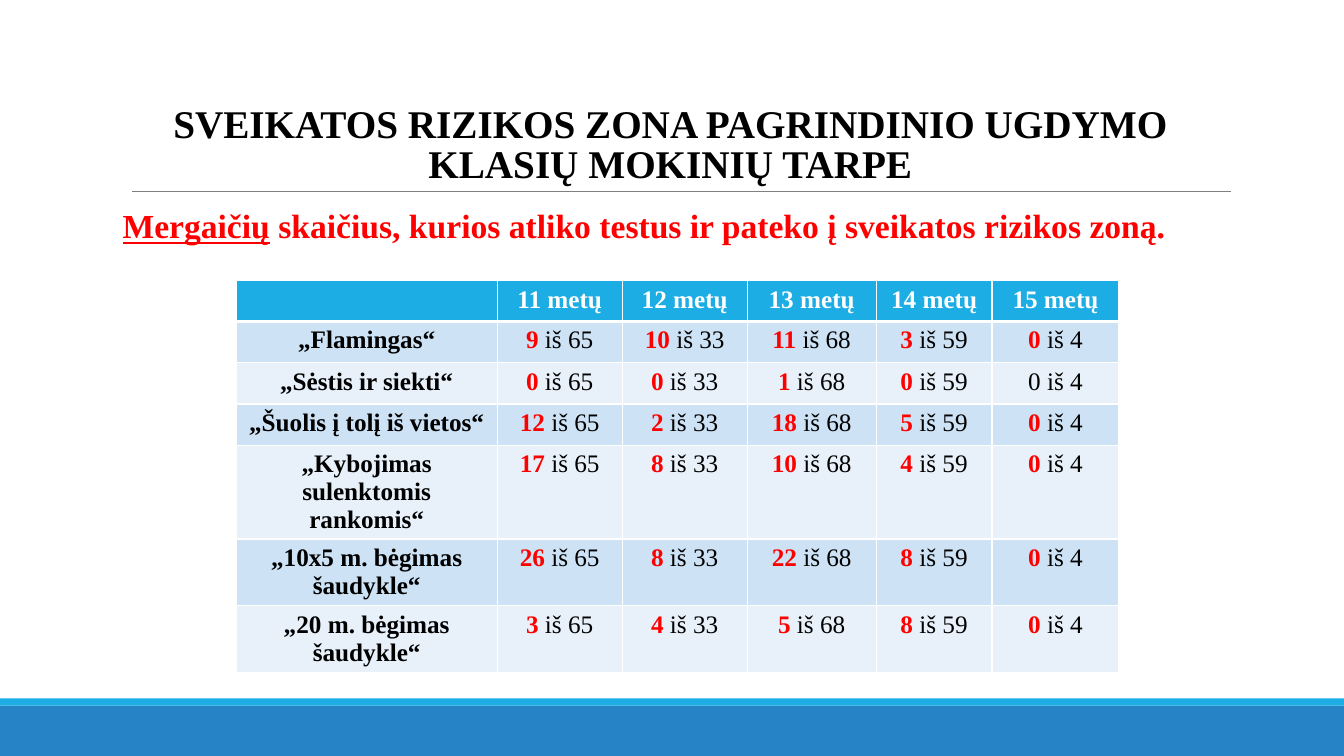
import pptx
import pptx.dml.color
import pptx.enum.shapes
import pptx.enum.text
import pptx.oxml
import pptx.oxml.ns
import pptx.util
from pptx.dml.color import RGBColor
from pptx.util import Cm

BLACK = RGBColor(0x00, 0x00, 0x00)
WHITE = RGBColor(0xFF, 0xFF, 0xFF)
RED = RGBColor(0xFF, 0x00, 0x00)
GREY = RGBColor(0x80, 0x80, 0x80)
BLUE = RGBColor(0x26, 0x83, 0xC6)
SKY = RGBColor(0x1C, 0xAD, 0xE4)
BANDS = (RGBColor(0xCD, 0xE3, 0xF5), RGBColor(0xE8, 0xF1, 0xFA))

FONT = "Times New Roman"
CENTER = pptx.enum.text.PP_ALIGN.CENTER
SLIDE_WIDTH, SLIDE_HEIGHT = Cm(33.87), Cm(19.05)

TITLE = "SVEIKATOS RIZIKOS ZONA PAGRINDINIO UGDYMO KLASIŲ MOKINIŲ TARPE"
AGES = (11, 12, 13, 14, 15)
TESTED = (65, 33, 68, 59, 4)
# Test name, girls at risk by age, row height in centimetres
TESTS = (
    ("„Flamingas“", (9, 10, 11, 3, 0), 1.04),
    ("„Sėstis ir siekti“", (0, 0, 1, 0, 0), 1.04),
    ("„Šuolis į tolį iš vietos“", (12, 2, 18, 5, 0), 1.04),
    ("„Kybojimas sulenktomis rankomis“", (17, 8, 10, 4, 0), 2.36),
    ("„10x5 m. bėgimas šaudykle“", (26, 8, 22, 8, 0), 1.68),
    ("„20 m. bėgimas šaudykle“", (3, 4, 5, 8, 0), 1.68),
)
COLUMN_WIDTHS = (6.58, 3.15, 3.15, 3.25, 2.92, 3.2)
HEADER_HEIGHT = 0.95
UNMARKED_CELL = (2, 5)


def add_text(paragraph, text, size=18, color=BLACK, bold=False, underline=False):
    run = paragraph.add_run()
    run.text = text
    run.font.name = FONT
    run.font.size = pptx.util.Pt(size)
    run.font.color.rgb = color
    run.font.bold = bold
    run.font.underline = underline


def add_bar(slide, left, top, width, height, color):
    bar = slide.shapes.add_shape(
        pptx.enum.shapes.MSO_SHAPE.RECTANGLE, left, top, width, height)
    bar.shadow.inherit = False
    bar.fill.solid()
    bar.fill.fore_color.rgb = color
    bar.line.fill.background()


def add_footer(slide, left, top, width, height):
    stripe_height = Cm(0.18)
    add_bar(slide, left, top + stripe_height, width, height - stripe_height, BLUE)
    add_bar(slide, left, top, width, stripe_height, SKY)


def add_title(slide, left, top, width, height):
    title = slide.shapes.title
    title.left, title.top, title.width, title.height = left, top, width, height
    frame = title.text_frame
    frame.auto_size = pptx.enum.text.MSO_AUTO_SIZE.NONE
    frame.word_wrap = True
    frame.vertical_anchor = pptx.enum.text.MSO_ANCHOR.BOTTOM
    paragraph = frame.paragraphs[0]
    paragraph.alignment = CENTER
    paragraph.line_spacing = 0.85
    add_text(paragraph, TITLE, size=28, bold=True)

    # Rule under the title
    bottom = top + height
    rule = slide.shapes.add_connector(
        pptx.enum.shapes.MSO_CONNECTOR.STRAIGHT,
        left + Cm(0.41), bottom, left + width + Cm(0.15), bottom)
    rule.line.color.rgb = GREY
    rule.line.width = pptx.util.Pt(0.5)
    rule._element.spPr.append(pptx.oxml.parse_xml(
        f"<a:effectLst {pptx.oxml.ns.nsdecls('a')}/>"))


def add_subtitle(slide, left, top, width, height):
    frame = slide.shapes.add_textbox(left, top, width, height).text_frame
    frame.word_wrap = True
    paragraph = frame.paragraphs[0]
    paragraph.space_after = pptx.util.Pt(6)
    add_text(paragraph, "Mergaičių", size=24, color=RED, bold=True, underline=True)
    add_text(paragraph, " skaičius, kurios atliko testus ir pateko į sveikatos rizikos zoną.",
             size=24, color=RED, bold=True)


def format_cell(cell, fill, top_width=1, bottom_width=1):
    cell.fill.solid()
    cell.fill.fore_color.rgb = fill
    properties = cell._tc.get_or_add_tcPr()
    widths = (("lnL", 1), ("lnR", 1), ("lnT", top_width), ("lnB", bottom_width))
    for position, (side, width) in enumerate(widths):
        properties.insert(position, pptx.oxml.parse_xml(
            f"<a:{side} {pptx.oxml.ns.nsdecls('a')} w='{pptx.util.Pt(width)}'>"
            f"<a:solidFill><a:srgbClr val='{WHITE}'/></a:solidFill></a:{side}>"))
    paragraph = cell.text_frame.paragraphs[0]
    paragraph.alignment = CENTER
    return paragraph


def add_results_table(slide, left, top):
    heights = [HEADER_HEIGHT] + [height for _, _, height in TESTS]
    table = slide.shapes.add_table(
        len(heights), len(COLUMN_WIDTHS), left, top,
        Cm(sum(COLUMN_WIDTHS)), Cm(sum(heights))).table
    for column, width in zip(table.columns, COLUMN_WIDTHS):
        column.width = Cm(width)
    for row, height in zip(table.rows, heights):
        row.height = Cm(height)

    # Header row
    format_cell(table.cell(0, 0), SKY, bottom_width=3)
    for column_index, age in enumerate(AGES, 1):
        paragraph = format_cell(table.cell(0, column_index), SKY, bottom_width=3)
        add_text(paragraph, f"{age} metų", color=WHITE, bold=True)

    # One row per test
    for row_index, (name, counts, _) in enumerate(TESTS, 1):
        fill = BANDS[(row_index - 1) % 2]
        top_width = 3 if row_index == 1 else 1
        paragraph = format_cell(table.cell(row_index, 0), fill, top_width)
        add_text(paragraph, name, bold=True)
        for column_index, (count, tested) in enumerate(zip(counts, TESTED), 1):
            paragraph = format_cell(table.cell(row_index, column_index), fill, top_width)
            marked = (row_index, column_index) != UNMARKED_CELL
            add_text(paragraph, str(count), color=RED if marked else BLACK, bold=marked)
            add_text(paragraph, f" iš {tested}")


def build_results_slide(presentation):
    slide = presentation.slides.add_slide(presentation.slide_layouts[5])
    add_footer(slide, 0, Cm(17.6), SLIDE_WIDTH, SLIDE_HEIGHT - Cm(17.6))
    add_title(slide, Cm(2.92), Cm(0.79), Cm(27.94), Cm(4.04))
    add_results_table(slide, Cm(5.95), Cm(7.07))
    add_subtitle(slide, Cm(2.84), Cm(5.05), Cm(28.47), Cm(1.27))


def main():
    presentation = pptx.Presentation()
    presentation.slide_width = SLIDE_WIDTH
    presentation.slide_height = SLIDE_HEIGHT
    build_results_slide(presentation)
    presentation.save("out.pptx")


if __name__ == "__main__":
    main()
